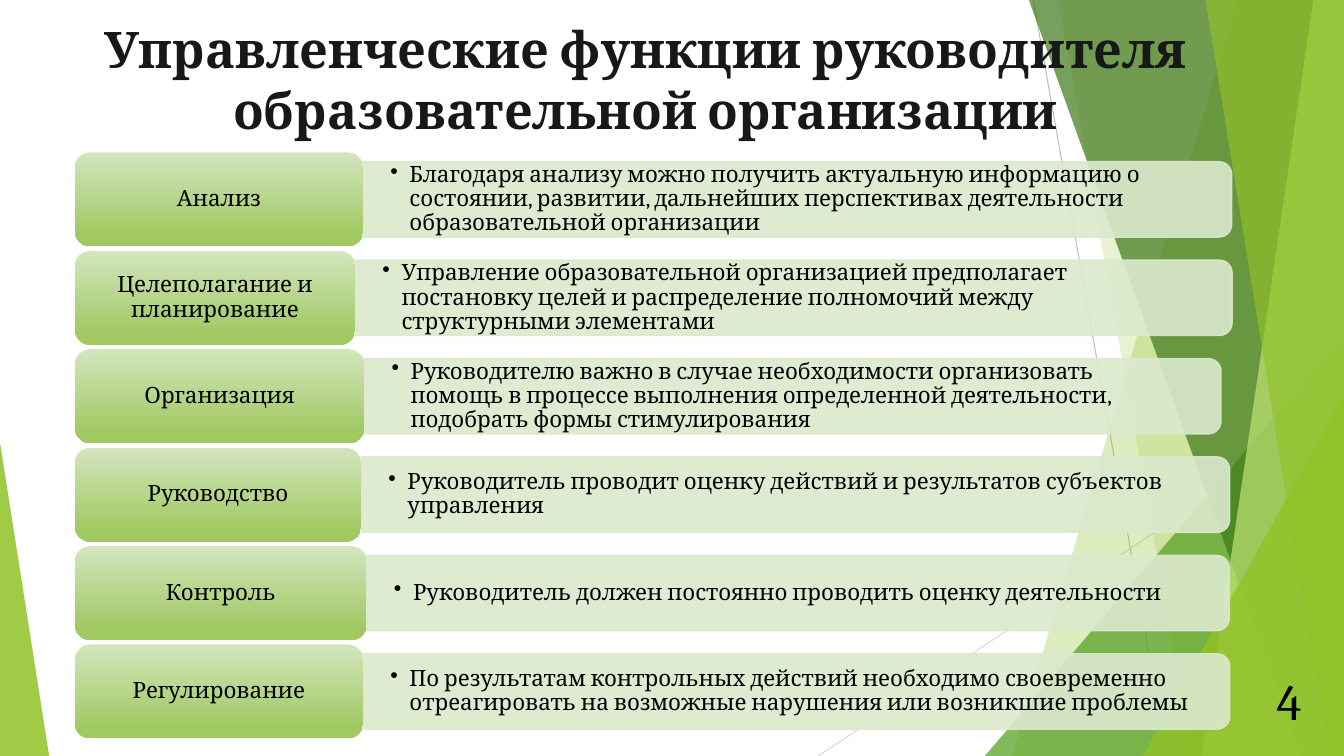
"""Build the slide on the management functions of a school head."""
from dataclasses import dataclass

from lxml.etree import SubElement
from pptx import Presentation
from pptx.dml.color import RGBColor
from pptx.enum.shapes import MSO_CONNECTOR, MSO_SHAPE
from pptx.enum.text import MSO_ANCHOR, MSO_AUTO_SIZE, PP_ALIGN
from pptx.oxml.ns import qn
from pptx.util import Cm, Pt


@dataclass(frozen=True)
class Theme:
    font: str = "Cambria"
    heading_size: int = 36
    body_size: int = 16
    heading: str = "181818"
    text: str = "000000"
    panel: str = "DBE9CD"
    label_top: str = "D3E5BE"
    label_bottom: str = "A0C962"
    lime: str = "90C226"
    pale: str = "C0E474"
    green: str = "54A021"
    dark: str = "3F7819"
    steep_line: str = "BFBFBF"
    flat_line: str = "D9D9D9"


THEME = Theme()
WIDTH, HEIGHT = 33.87, 19.05
ROW_LEFT, ROW_TOP, ROW_PITCH = 1.89, 3.84, 2.48
LABEL_HEIGHT, PANEL_HEIGHT, DETAIL_HEIGHT = 2.37, 1.9, 1.7

FUNCTIONS = [
    ("Анализ", 7.26, 21.89,
     "Благодаря анализу можно получить актуальную информацию о состоянии, развитии, "
     "дальнейших перспективах деятельности образовательной организации"),
    ("Целеполагание и планирование", 7.06, 22.1,
     "Управление образовательной организацией предполагает постановку целей и "
     "распределение полномочий между структурными элементами"),
    ("Организация", 7.29, 21.59,
     "Руководителю важно в случае необходимости организовать помощь в процессе "
     "выполнения определенной деятельности, подобрать формы стимулирования"),
    ("Руководство", 7.21, 21.89,
     "Руководитель проводит оценку действий и результатов субъектов управления"),
    ("Контроль", 7.35, 21.74,
     "Руководитель должен постоянно проводить оценку деятельности"),
    ("Регулирование", 7.26, 21.84,
     "По результатам контрольных действий необходимо своевременно отреагировать "
     "на возможные нарушения или возникшие проблемы"),
]


def color(code):
    return RGBColor.from_string(code)


def paint(shape, code, opacity, outlined=False):
    shape.shadow.inherit = False
    shape.fill.solid()
    shape.fill.fore_color.rgb = color(code)
    if outlined:
        shape.line.color.rgb = color(code)
        shape.line.width = Pt(1)
    else:
        shape.line.fill.background()
    for shade in shape.element.spPr.iter(qn("a:srgbClr")):
        SubElement(shade, qn("a:alpha"), val=str(opacity * 1000))


def write(shape, text, size, code, align, anchor=MSO_ANCHOR.MIDDLE,
          inset=(0.25, 0.13), spacing=1.0, bold=False):
    frame = shape.text_frame
    frame.word_wrap = True
    frame.auto_size = MSO_AUTO_SIZE.NONE
    frame.vertical_anchor = anchor
    frame.margin_left = frame.margin_right = Cm(inset[0])
    frame.margin_top = frame.margin_bottom = Cm(inset[1])
    frame.text = text
    para = frame.paragraphs[0]
    para.alignment = align
    para.line_spacing = spacing
    para.font.name = THEME.font
    para.font.size = Pt(size)
    para.font.bold = bold
    para.font.color.rgb = color(code)
    return para


def add_bullet(para, indent):
    properties = para._p.get_or_add_pPr()
    properties.set("marL", str(Cm(indent)))
    properties.set("indent", str(-Cm(indent)))
    bullet = properties.makeelement(qn("a:buChar"), {"char": "•"})
    properties.find(qn("a:defRPr")).addprevious(bullet)


def add_ray(page, start, end, code):
    ray = page.shapes.add_connector(
        MSO_CONNECTOR.STRAIGHT, *(Cm(value) for value in start + end))
    ray.line.color.rgb = color(code)
    ray.line.width = Pt(0.75)
    SubElement(ray.element.spPr, qn("a:effectLst"))


def add_facet(page, top_x, bottom_x, code, opacity):
    builder = page.shapes.build_freeform(Cm(top_x), 0)
    corners = [(WIDTH, 0), (WIDTH, HEIGHT), (bottom_x, HEIGHT)]
    builder.add_line_segments([(Cm(x), Cm(y)) for x, y in corners])
    paint(builder.convert_to_shape(), code, opacity)


def add_corner(page, left, top, width, apex, code, opacity):
    corner = page.shapes.add_shape(
        MSO_SHAPE.ISOSCELES_TRIANGLE, Cm(left), Cm(top), Cm(width), Cm(HEIGHT - top))
    corner.adjustments[0] = apex
    paint(corner, code, opacity)


def add_scenery(page):
    add_ray(page, (26.04, 0), (29.41, HEIGHT), THEME.steep_line)
    add_ray(page, (WIDTH, 10.24), (20.62, HEIGHT), THEME.flat_line)
    add_facet(page, 31.19, 25.5, THEME.lime, 30)
    add_facet(page, 26.67, 30.05, THEME.lime, 20)
    add_corner(page, 24.82, 8.46, 9.05, 1, THEME.green, 72)
    add_facet(page, 25.93, 32.79, THEME.dark, 70)
    add_facet(page, 33.1, 30.28, THEME.pale, 70)
    add_facet(page, 30.38, 33.48, THEME.lime, 65)
    add_corner(page, 28.8, 9.98, 5.07, 1, THEME.lime, 80)
    add_corner(page, 0, 11.15, 1.24, 0, THEME.lime, 85)


def add_title(page, text):
    title = page.shapes.title
    page.shapes.element.append(title.element)
    title.left, title.top = Cm(0.46), Cm(0.33)
    title.width, title.height = Cm(31.62), Cm(3.12)
    write(title, text, THEME.heading_size, THEME.heading, PP_ALIGN.CENTER,
          anchor=MSO_ANCHOR.TOP, bold=True)


def add_panel(page, left, middle, length):
    panel = page.shapes.add_shape(
        MSO_SHAPE.ROUND_2_SAME_RECTANGLE,
        Cm(left + (length - PANEL_HEIGHT) / 2), Cm(middle - length / 2),
        Cm(PANEL_HEIGHT), Cm(length))
    panel.rotation = 90
    paint(panel, THEME.panel, 90, outlined=True)


def add_detail(page, left, middle, length, text):
    box = page.shapes.add_textbox(
        Cm(left), Cm(middle - DETAIL_HEIGHT / 2), Cm(length - 0.09), Cm(DETAIL_HEIGHT))
    para = write(box, text, THEME.body_size, THEME.text, PP_ALIGN.LEFT,
                 inset=(0.69, 0.36), spacing=0.9)
    add_bullet(para, 0.48)


def add_label(page, top, width, text):
    label = page.shapes.add_shape(
        MSO_SHAPE.ROUNDED_RECTANGLE, Cm(ROW_LEFT), Cm(top), Cm(width), Cm(LABEL_HEIGHT))
    label.shadow.inherit = False
    label.line.fill.background()
    label.fill.gradient()
    label.fill.gradient_angle = 270
    stops = [(0, THEME.label_top), (0.88, THEME.label_bottom)]
    for stop, (position, code) in zip(label.fill.gradient_stops, stops):
        stop.position = position
        stop.color.rgb = color(code)
    write(label, text, THEME.body_size, THEME.text, PP_ALIGN.CENTER,
          inset=(0.3, 0.2), spacing=0.9)


def add_page_number(page, text):
    box = page.shapes.add_textbox(Cm(31.14), Cm(17.15), Cm(1.91), Cm(1.02))
    write(box, text, THEME.heading_size, THEME.text, PP_ALIGN.RIGHT)


def main():
    deck = Presentation()
    deck.slide_width, deck.slide_height = Cm(WIDTH), Cm(HEIGHT)
    page = deck.slides.add_slide(deck.slide_layouts.get_by_name("Title Only"))
    add_scenery(page)
    add_title(page, "Управленческие функции руководителя образовательной организации")
    for row, (name, label_width, length, detail) in enumerate(FUNCTIONS):
        top = ROW_TOP + row * ROW_PITCH
        middle = top + LABEL_HEIGHT / 2
        left = ROW_LEFT + label_width
        add_panel(page, left, middle, length)
        add_detail(page, left, middle, length, detail)
        add_label(page, top, label_width, name)
    add_page_number(page, "4")
    deck.save("out.pptx")


if __name__ == "__main__":
    main()
